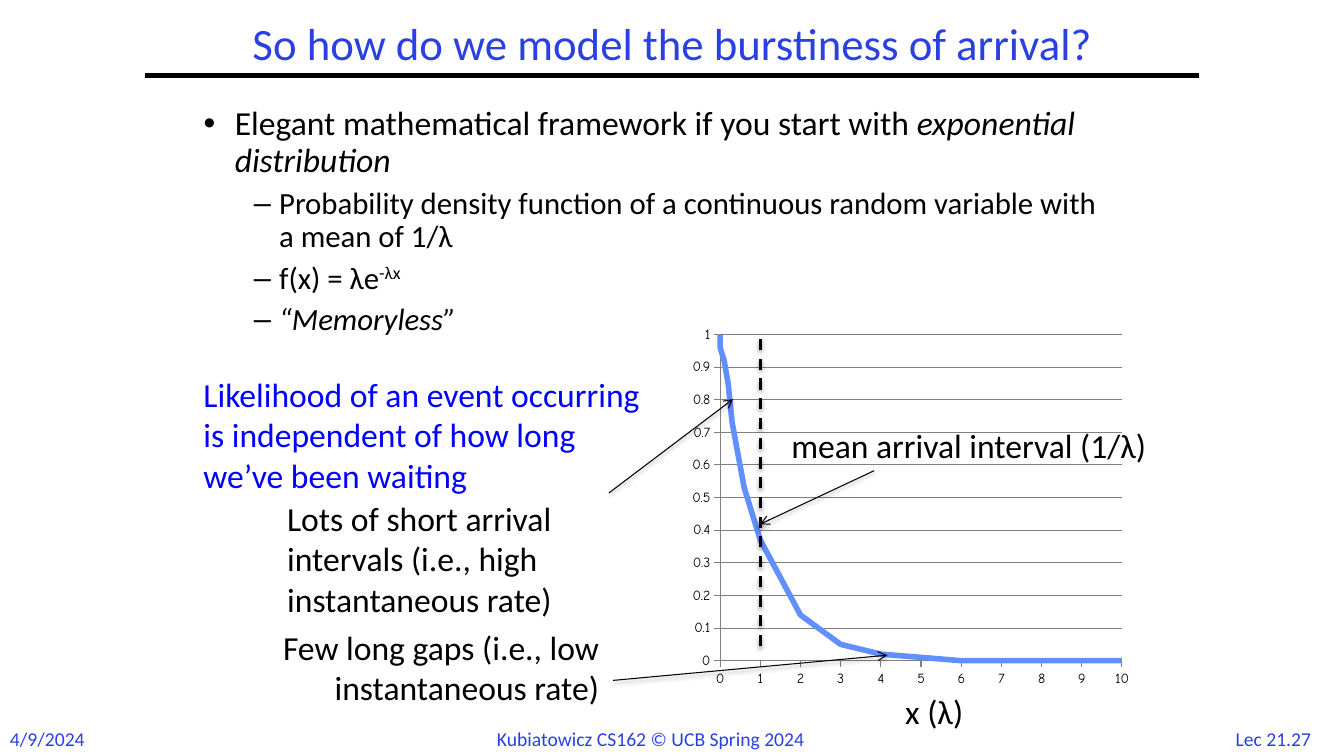
"""Build the slide on modelling bursty arrivals with an exponential distribution."""
import dataclasses

import lxml.etree
import pptx
import pptx.chart.data
import pptx.dml.color
import pptx.enum.chart
import pptx.enum.dml
import pptx.enum.shapes
import pptx.enum.text
import pptx.oxml
import pptx.oxml.ns
import pptx.util

Inches = pptx.util.Inches
Pt = pptx.util.Pt
qn = pptx.oxml.ns.qn
RGB = pptx.dml.color.RGBColor.from_string
Align = pptx.enum.text.PP_ALIGN
Anchor = pptx.enum.text.MSO_ANCHOR


@dataclasses.dataclass(frozen=True)
class Theme:
    font: str = "Calibri"
    chart_font: str = "Comic Neue"
    black: str = "000000"
    heading: str = "2A40E2"
    emphasis: str = "0000FF"
    curve: str = "618FFD"
    grid: str = "808080"
    title_size: int = 32
    text_size: int = 24
    detail_size: int = 22
    footer_size: int = 14
    chart_size: int = 10


theme = Theme()
SHADOW = (
    '<a:outerShdw xmlns:a="http://schemas.openxmlformats.org/drawingml/2006/main" '
    'blurRad="39400" dist="20300" dir="5400000" rotWithShape="0">'
    '<a:srgbClr val="000000"><a:alpha val="38000"/></a:srgbClr></a:outerShdw>'
)


def write(para, text, size=theme.text_size, color=theme.black, italic=False, baseline=0):
    span = para.add_run()
    span.text = text
    span.font.name = theme.font
    span.font.size = Pt(size)
    span.font.italic = italic
    span.font.color.rgb = RGB(color)
    if baseline:
        span.font._element.set("baseline", str(baseline * 1000))


def draw_line(start, end, width=0.75, dash=None, arrow=False, shadow=True):
    line = page.shapes.add_connector(
        pptx.enum.shapes.MSO_CONNECTOR.STRAIGHT, *map(Inches, start + end))
    line.line.color.rgb = RGB(theme.black)
    line.line.width = Pt(width)
    if dash:
        line.line.dash_style = dash
    properties = line._element.spPr
    if arrow:
        lxml.etree.SubElement(properties.find(qn("a:ln")), qn("a:headEnd"), type="arrow")
    effects = lxml.etree.SubElement(properties, qn("a:effectLst"))
    if shadow:
        effects.append(pptx.oxml.parse_xml(SHADOW))


deck = pptx.Presentation()
deck.slide_width, deck.slide_height = Inches(13.33), Inches(7.5)
page = deck.slides.add_slide(deck.slide_layouts[6])

draw_line((1.44, 0.75), (11.89, 0.75), width=3, shadow=False)

body = page.shapes.add_textbox(Inches(1.92), Inches(1.01), Inches(9.25), Inches(5.7))
body.text_frame.word_wrap = True
points = [
    (0, [("Elegant mathematical framework if you start with ", {}),
         ("exponential distribution", {"italic": True})]),
    (1, [("Probability density function of a continuous random variable "
          "with a mean of 1/λ", {})]),
    (1, [("f(x) = λe", {}), ("-λx", {"baseline": 30})]),
    (1, [("“Memoryless”", {"italic": True})]),
]
levels = [(theme.text_size, "•", 0.31, 0.31), (theme.detail_size, "–", 0.75, 0.25)]
for index, (level, spans) in enumerate(points):
    size, bullet, margin, hanging = levels[level]
    para = body.text_frame.add_paragraph() if index else body.text_frame.paragraphs[0]
    para.level = level
    para.line_spacing = 0.9
    para.space_before = Pt(6)
    properties = para._p.get_or_add_pPr()
    properties.set("marL", str(Inches(margin)))
    properties.set("indent", str(-Inches(hanging)))
    lxml.etree.SubElement(properties, qn("a:buFont"), typeface="Arial")
    lxml.etree.SubElement(properties, qn("a:buChar"), char=bullet)
    for text, style in spans:
        write(para, text, size=size, **style)

density = pptx.chart.data.XyChartData()
series_data = density.add_series("Series 1")
curve_points = zip(
    [0, 0, 0, 0, 0.1, 0.2, 0.3, 0.6, 1, 2, 3, 4, 5, 6, 7, 8, 10],
    [1, 0.99, 0.98, 0.96, 0.92, 0.85, 0.73, 0.53, 0.37, 0.14, 0.05, 0.02, 0.01, 0, 0, 0, 0])
for x, y in curve_points:
    series_data.add_data_point(x, y)
chart = page.shapes.add_chart(
    pptx.enum.chart.XL_CHART_TYPE.XY_SCATTER_LINES_NO_MARKERS,
    Inches(6.78), Inches(3.17), Inches(4.53), Inches(3.72), density).chart
chart.has_legend = False
chart.has_title = False
chart.font.name = theme.chart_font
chart.font.size = Pt(theme.chart_size)
chart.font.color.rgb = RGB(theme.black)
chart.plots[0].vary_by_categories = False
curve = chart.plots[0].series[0]
curve.smooth = False
curve.format.line.color.rgb = RGB(theme.curve)
curve.format.line.width = Pt(4)
for axis, top, step in [(chart.category_axis, 10, 1), (chart.value_axis, 1, 0.1)]:
    axis.minimum_scale, axis.maximum_scale, axis.major_unit = 0, top, step
    axis.major_tick_mark = pptx.enum.chart.XL_TICK_MARK.OUTSIDE
    axis.minor_tick_mark = pptx.enum.chart.XL_TICK_MARK.NONE
    axis.tick_labels.number_format = "General"
    axis.tick_labels.number_format_is_linked = False
    axis.format.line.color.rgb = RGB(theme.grid)
chart.category_axis.has_major_gridlines = False
chart.value_axis.has_major_gridlines = True
chart.value_axis.major_gridlines.format.line.color.rgb = RGB(theme.grid)

plot_area = chart._chartSpace.chart.plotArea
for old_layout in plot_area.findall(qn("c:layout")):
    plot_area.remove(old_layout)
layout = lxml.etree.Element(qn("c:layout"))
plot_area.insert(0, layout)
manual = lxml.etree.SubElement(layout, qn("c:manualLayout"))
for tag, value in [("layoutTarget", "inner"), ("xMode", "edge"), ("yMode", "edge"),
                   ("x", 0.08), ("y", 0.04), ("w", 0.88), ("h", 0.87)]:
    lxml.etree.SubElement(manual, qn("c:" + tag), val=str(value))

footer = {"size": theme.footer_size, "color": theme.heading}
labels = [
    ("So how do we model the burstiness of arrival?", (2.03, 0.17, 9.28, 0.58),
     True, Align.CENTER, {"size": theme.title_size, "color": theme.heading}),
    ("Likelihood of an event occurring is independent of how long we’ve been waiting",
     (1.92, 3.66, 4.67, 1.31), True, Align.LEFT, {"color": theme.emphasis}),
    ("Lots of short arrival intervals (i.e., high instantaneous rate)",
     (2.75, 4.89, 4.04, 1.31), True, Align.LEFT, {}),
    ("Few long gaps (i.e., low instantaneous rate)",
     (2.27, 6.17, 3.77, 0.91), True, Align.RIGHT, {}),
    ("x (λ)", (8.88, 6.81, 0.86, 0.5), False, Align.LEFT, {}),
    ("mean arrival interval (1/λ)", (7.75, 4.17, 4, 0.5), False, Align.LEFT, {}),
    ("4/9/2024", (0, 7.16, 0.96, 0.34), False, Align.LEFT, footer),
    ("Kubiatowicz CS162 © UCB Spring 2024", (4.83, 7.16, 3.68, 0.34),
     False, Align.LEFT, footer),
    ("Lec 21.27", (12.09, 7.16, 1.08, 0.34), False, Align.CENTER, footer),
]
for text, place, wrap, align, style in labels:
    box = page.shapes.add_textbox(*map(Inches, place))
    box.text_frame.word_wrap = wrap
    para = box.text_frame.paragraphs[0]
    para.alignment = align
    if style.get("size") == theme.title_size:
        box.text_frame.vertical_anchor = Anchor.MIDDLE
        para.line_spacing = 0.9
    write(para, text, **style)

draw_line((7.54, 6.41), (7.54, 3.33), width=2, dash=pptx.enum.dml.MSO_LINE.DASH)
for target, label_end in [((7.27, 3.96), (6.04, 4.89)),
                          ((8.8, 6.5), (6.08, 6.75)),
                          ((7.54, 5.2), (8.67, 4.67))]:
    draw_line(target, label_end, arrow=True)

deck.save("out.pptx")
